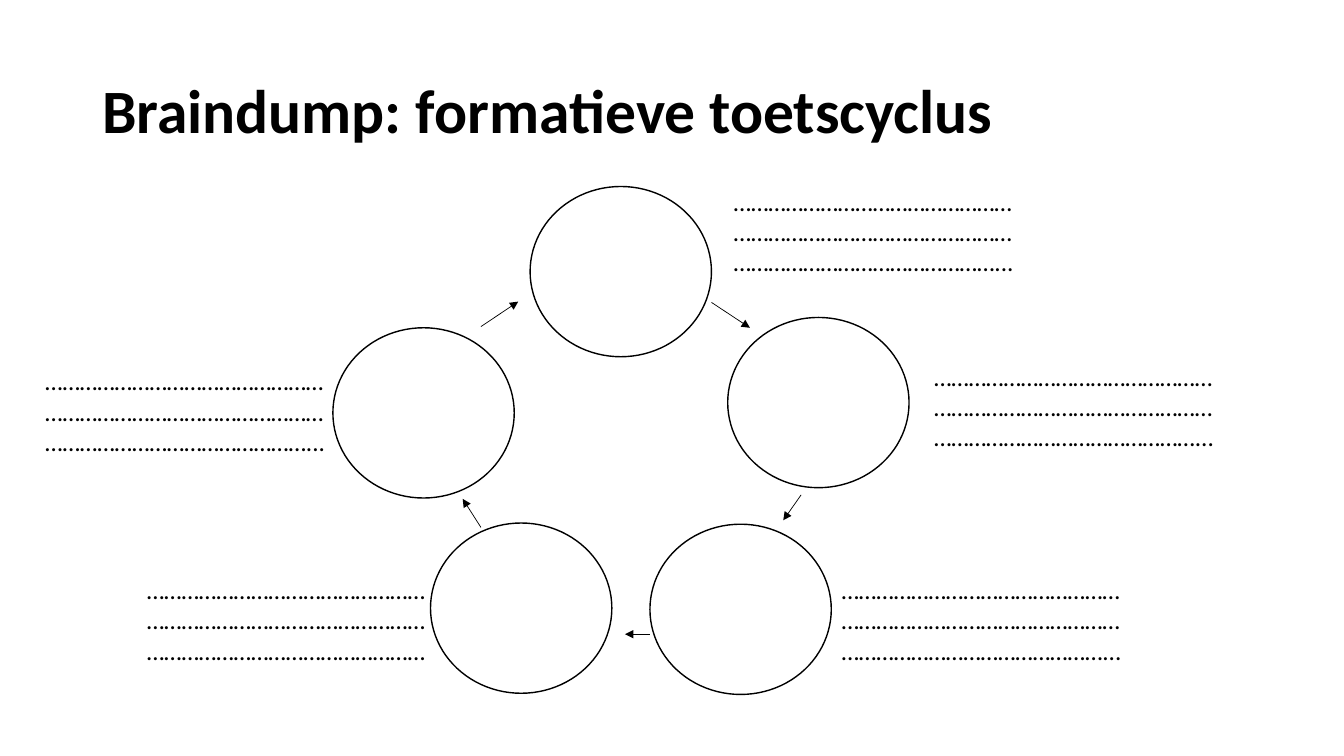
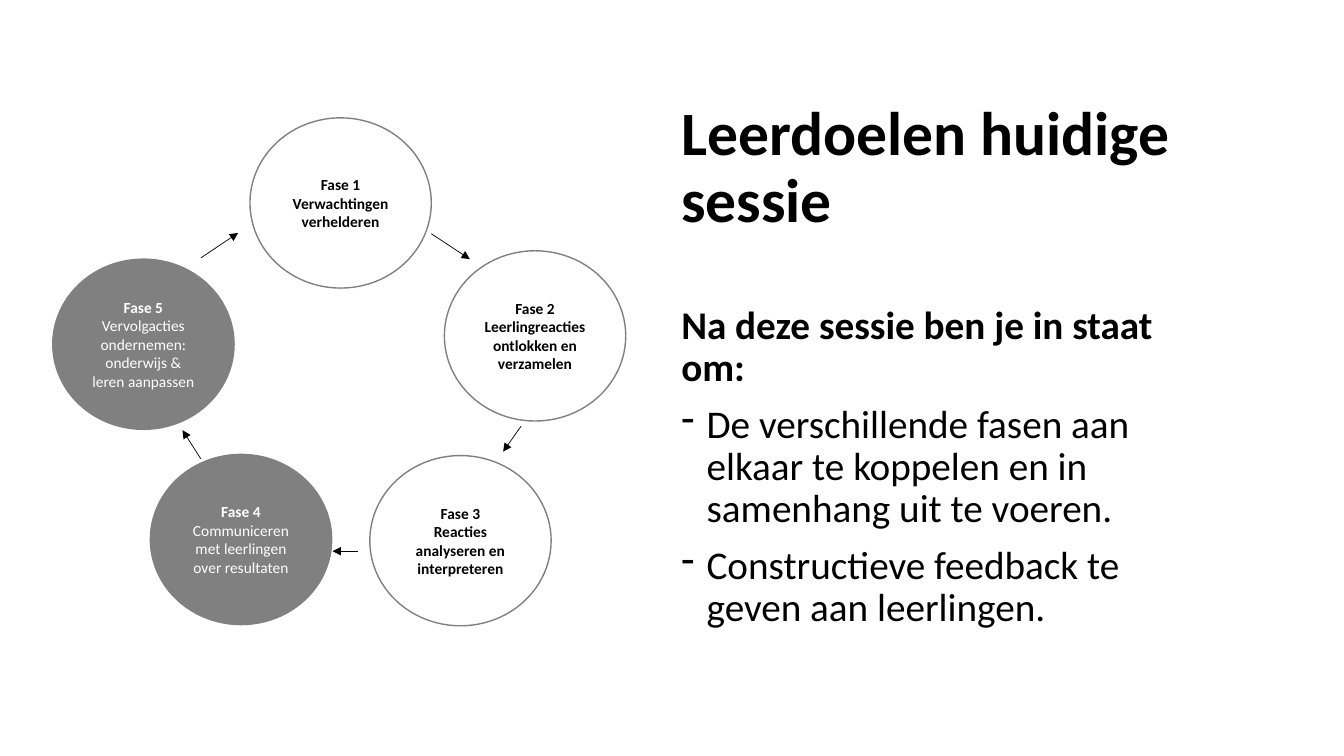
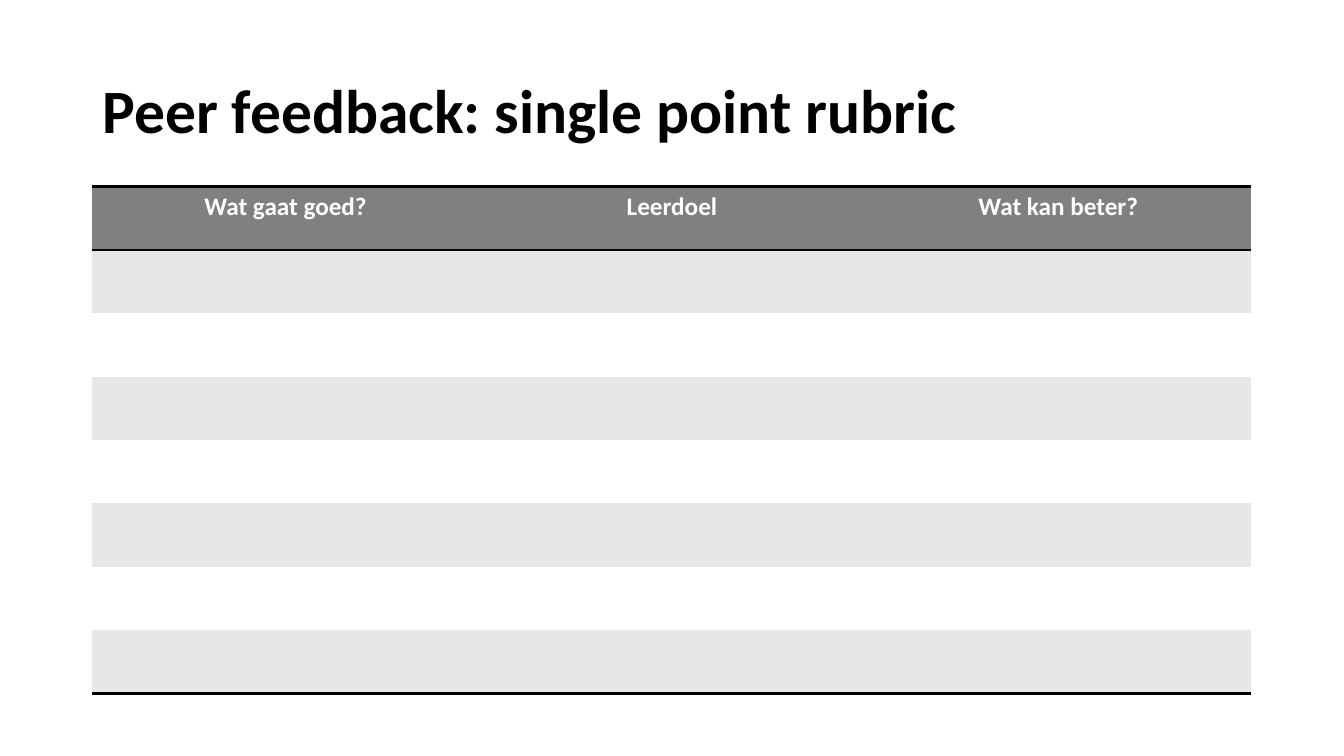
from pptx import Presentation
from pptx.dml.color import RGBColor
from pptx.enum.shapes import MSO_CONNECTOR, MSO_SHAPE
from pptx.enum.text import MSO_ANCHOR, PP_ALIGN
from pptx.oxml.ns import qn
from pptx.util import Cm, Pt
from lxml.etree import SubElement

BLACK = RGBColor(0x00, 0x00, 0x00)
WHITE = RGBColor(0xFF, 0xFF, 0xFF)
GREY = RGBColor(0x80, 0x80, 0x80)
PALE = RGBColor(0xE7, 0xE7, 0xE7)
FONT = "Calibri"

# Content
BLANK = "…" * 47 + "..."
FULL = "…" * 48
NOTES = [  # left, top, dotted lines to write on
    (18.24, 4.57, BLANK), (23.29, 8.97, BLANK), (20.96, 14.35, BLANK),
    (3.45, 14.35, FULL), (0.89, 9.09, BLANK),
]
PHASES = [  # name, task, done in this session
    ("Fase 1", "Verwachtingen verhelderen", False),
    ("Fase 2", "Leerlingreacties ontlokken en verzamelen", False),
    ("Fase 3", "Reacties analyseren en interpreteren", False),
    ("Fase 4", "Communiceren met leerlingen over resultaten", True),
    ("Fase 5", "Vervolgacties ondernemen: onderwijs & leren aanpassen", True),
]
INTRO = "Na deze sessie ben je in staat om:"
GOALS = [
    "De verschillende fasen aan elkaar te koppelen en in samenhang uit te voeren.",
    "Constructieve feedback te geven aan leerlingen.",
]
HEADS = ["Wat gaat goed?", "Leerdoel", "Wat kan beter?"]
ROWS = 8

# Shared layout in cm; the cycle is measured from the top circle's corner
WIDE = (2.33, 1.02, 29.21, 3.68)
CIRCLE = (4.57, 4.29)
SPOTS = [(0, 0), (4.98, 3.3), (3.02, 8.51), (-2.51, 8.48), (-4.97, 3.56)]
ARROWS = [  # from x, from y, to x, to y
    (4.57, 2.92, 5.54, 3.56), (6.83, 7.77, 6.38, 8.41),
    (3.02, 11.28, 2.39, 11.28), (-1.24, 8.59, -1.7, 7.87),
    (-1.24, 3.53, -0.3, 2.9),
]


def style(para, size, color=BLACK, bold=False):
    for run in para.runs:
        font = run.font
        font.name, font.size, font.bold = FONT, Pt(size), bold
        font.color.rgb = color


def add_text(slide, box, lines, size, bold=False, anchor=MSO_ANCHOR.TOP):
    frame = slide.shapes.add_textbox(*map(Cm, box)).text_frame
    frame.word_wrap = True
    frame.vertical_anchor = anchor
    frame.text = "\n".join(lines)
    for para in frame.paragraphs:
        style(para, size, bold=bold)
    return frame


def add_title(slide, text, box=WIDE):
    frame = add_text(slide, box, [text], 44, True, MSO_ANCHOR.MIDDLE)
    frame.paragraphs[0].line_spacing = 0.9


def add_arrow(slide, ends):
    line = slide.shapes.add_connector(MSO_CONNECTOR.STRAIGHT, *map(Cm, ends))
    line.line.color.rgb = BLACK
    line.line.width = Pt(0.5)
    props = line._element.spPr
    SubElement(props.find(qn("a:ln")), qn("a:tailEnd"), type="triangle")
    SubElement(props, qn("a:effectLst"))


def add_cycle(slide, left, top, edge, spots, arrows):
    circles = []
    for x, y in spots:
        oval = slide.shapes.add_shape(
            MSO_SHAPE.OVAL, Cm(left + x), Cm(top + y), *map(Cm, CIRCLE))
        oval.shadow.inherit = False
        oval.fill.solid()
        oval.fill.fore_color.rgb = WHITE
        oval.line.color.rgb = edge
        oval.line.width = Pt(1)
        circles.append(oval)
    for x1, y1, x2, y2 in arrows:
        add_arrow(slide, (left + x1, top + y1, left + x2, top + y2))
    return circles


def set_edge(cell, side):
    props = cell._tc.get_or_add_tcPr()
    edge = SubElement(props, qn("a:" + side), w=str(Pt(2)))
    fill = SubElement(edge, qn("a:solidFill"))
    SubElement(fill, qn("a:srgbClr"), val=str(BLACK))


def dump_slide(slide):
    add_title(slide, "Braindump: formatieve toetscyclus")
    add_cycle(slide, 13.36, 4.7, BLACK, SPOTS, ARROWS)
    for left, top, dots in NOTES:
        add_text(slide, (left, top, 7.87, 2.57), [dots], 18)


def goal_slide(slide):
    add_title(slide, "Leerdoelen huidige sessie", (16.92, 2.24, 13.82, 4.04))

    # Goals
    frame = add_text(slide, (16.92, 6.73, 13.82, 10.11), [INTRO] + GOALS, 28,
                     anchor=MSO_ANCHOR.MIDDLE)
    for para in frame.paragraphs:
        para.line_spacing = 0.9
        para.space_before = Pt(10)
    intro, *goals = frame.paragraphs
    style(intro, 28, bold=True)
    for para in goals:
        props = para._p.get_or_add_pPr()
        props.set("marL", str(Cm(0.64)))
        props.set("indent", str(-Cm(0.64)))
        SubElement(props, qn("a:buChar"), char="-")

    # Cycle, with the second circle and third arrow set closer in
    spots, arrows = SPOTS[:], ARROWS[:]
    spots[1] = (4.9, 3.35)
    arrows[2] = (2.72, 10.92, 2.08, 10.92)
    circles = add_cycle(slide, 6.3, 2.97, GREY, spots, arrows)
    for oval, (name, task, done) in zip(circles, PHASES):
        if done:
            oval.fill.fore_color.rgb = GREY
        frame = oval.text_frame
        frame.text = name + "\n" + task
        frame.vertical_anchor = MSO_ANCHOR.MIDDLE
        color = WHITE if done else BLACK
        for para, bold in zip(frame.paragraphs, (True, not done)):
            para.alignment = PP_ALIGN.CENTER
            style(para, 11, color, bold)


def rubric_slide(slide):
    add_title(slide, "Peer feedback: single point rubric")
    table = slide.shapes.add_table(
        ROWS, len(HEADS), Cm(2.33), Cm(4.7), Cm(29.21), Cm(12.78)).table
    for row in range(ROWS):
        for col, head in enumerate(HEADS):
            cell = table.cell(row, col)
            if row == 0:
                set_edge(cell, "lnT")
            if row in (0, ROWS - 1):
                set_edge(cell, "lnB")
            cell.fill.solid()
            cell.fill.fore_color.rgb = PALE if row % 2 else WHITE
            if row == 0:
                cell.fill.fore_color.rgb = GREY
                cell.text_frame.text = head
                para = cell.text_frame.paragraphs[0]
                para.alignment = PP_ALIGN.CENTER
                style(para, 18, WHITE, True)
    # Lines only where set above
    table._tbl.tblPr.find(qn("a:tableStyleId")).text = (
        "{2D5ABB26-0587-4C30-8999-92F81FD0307C}")


def main():
    deck = Presentation()
    deck.slide_width, deck.slide_height = Cm(33.87), Cm(19.05)
    for build in (dump_slide, goal_slide, rubric_slide):
        build(deck.slides.add_slide(deck.slide_layouts[6]))
    deck.save("out.pptx")


if __name__ == "__main__":
    main()
